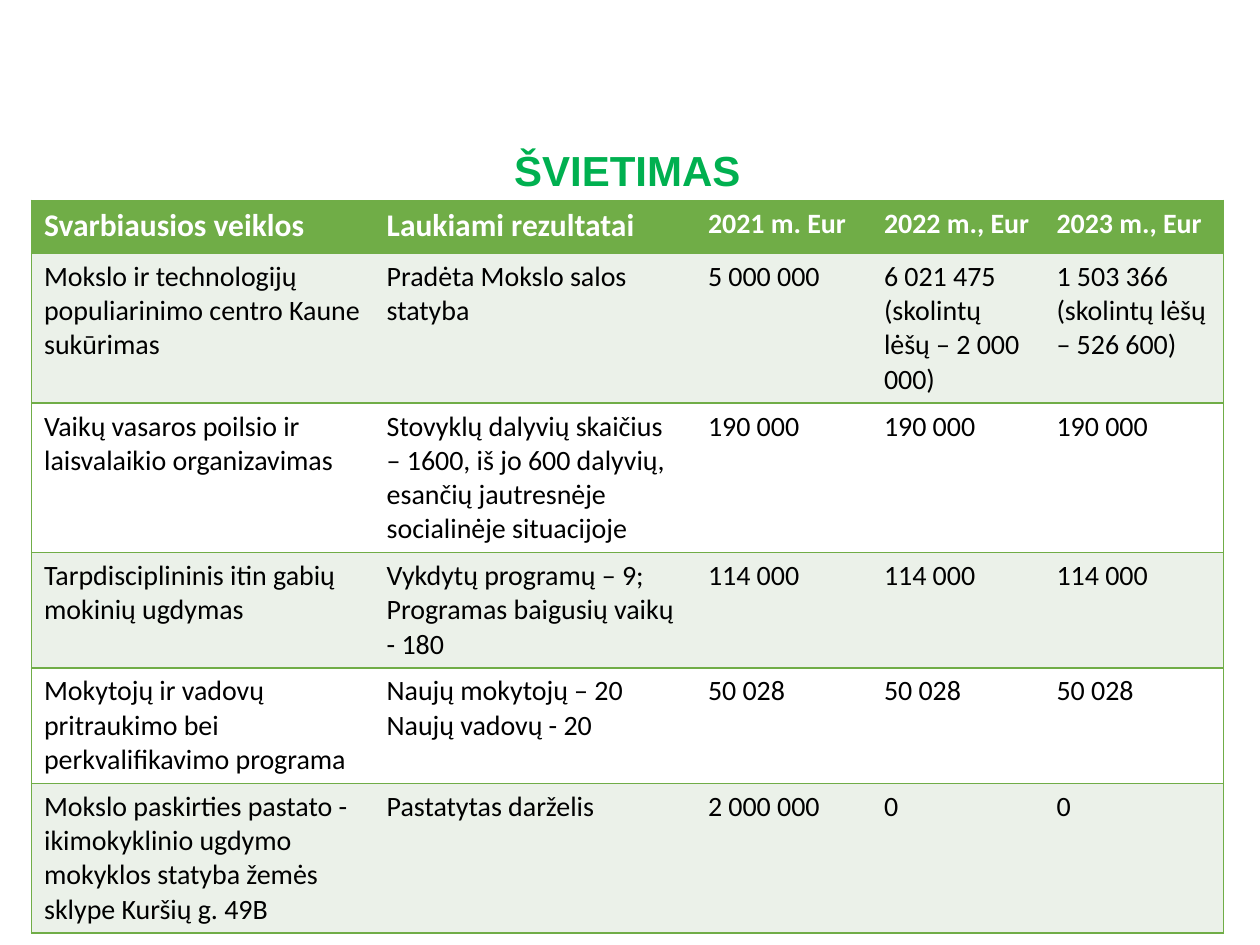
"""Build the education programme slide with its budget table."""
from lxml import etree
from pptx import Presentation
from pptx.dml.color import RGBColor
from pptx.enum.text import MSO_ANCHOR, PP_ALIGN
from pptx.oxml.ns import qn
from pptx.util import Pt

MIDDLE = MSO_ANCHOR.MIDDLE
CENTER = PP_ALIGN.CENTER
GREEN, PALE, WHITE, BLACK, TITLE_GREEN = "70AD47", "EBF1E9", "FFFFFF", "000000", "00B050"
COLUMN_WIDTHS = [195.8, 183.6, 100.6, 98.6, 102.6]
ROW_HEIGHTS = [30.4, 63.4, 82.3, 63.4, 63.4, 82.3]
ROWS = [
    ["Svarbiausios veiklos", "Laukiami rezultatai", "2021 m. Eur", "2022 m., Eur", "2023 m., Eur"],
    ["Mokslo ir technologijų populiarinimo centro Kaune sukūrimas", "Pradėta Mokslo salos statyba",
     "5 000 000", "6 021 475 (skolintų lėšų – 2 000 000)", "1 503 366 (skolintų lėšų – 526 600)"],
    ["Vaikų vasaros poilsio ir laisvalaikio organizavimas",
     "Stovyklų dalyvių skaičius – 1600, iš jo 600 dalyvių, esančių jautresnėje socialinėje situacijoje",
     "190 000", "190 000", "190 000"],
    ["Tarpdisciplininis itin gabių mokinių ugdymas",
     "Vykdytų programų – 9;\nProgramas baigusių vaikų - 180", "114 000", "114 000", "114 000"],
    ["Mokytojų ir vadovų pritraukimo bei perkvalifikavimo programa",
     "Naujų mokytojų – 20\nNaujų vadovų - 20", "50 028", "50 028", "50 028"],
    ["Mokslo paskirties pastato - ikimokyklinio ugdymo mokyklos statyba žemės sklype Kuršių g. 49B",
     "Pastatytas darželis", "2 000 000", "0", "0"],
]


def add_run(paragraph, text, font_name, size, color, bold):
    run = paragraph.add_run()
    run.text = text
    run.font.name = font_name
    run.font.size = Pt(size)
    run.font.bold = bold
    run.font.color.rgb = RGBColor.from_string(color)


def set_borders(cell, visible_sides):
    properties = cell._tc.get_or_add_tcPr()
    for index, side in enumerate("LRTB"):
        line = etree.Element(qn(f"a:ln{side}"), w=str(Pt(1)))
        if side in visible_sides:
            fill = etree.SubElement(line, qn("a:solidFill"))
            etree.SubElement(fill, qn("a:srgbClr"), val=GREEN)
        else:
            etree.SubElement(line, qn("a:noFill"))
        properties.insert(index, line)


presentation = Presentation()
presentation.slide_width, presentation.slide_height = Pt(720), Pt(540)
slide = presentation.slides.add_slide(presentation.slide_layouts[5])

title = slide.shapes.title
title.left, title.top, title.width, title.height = Pt(48.2), Pt(67.7), Pt(620.6), Pt(61.9)
title.text_frame.vertical_anchor = MIDDLE
title_paragraph = title.text_frame.paragraphs[0]
title_paragraph.alignment = CENTER
title_paragraph.line_spacing = 0.9
add_run(title_paragraph, "ŠVIETIMAS", "Arial", 24, TITLE_GREEN, True)

table = slide.shapes.add_table(
    len(ROWS), len(COLUMN_WIDTHS), Pt(18), Pt(114.5), Pt(sum(COLUMN_WIDTHS)), Pt(sum(ROW_HEIGHTS))
).table
table.horz_banding = False
for column, width in zip(table.columns, COLUMN_WIDTHS):
    column.width = Pt(width)

for row_index, texts in enumerate(ROWS):
    table.rows[row_index].height = Pt(ROW_HEIGHTS[row_index])
    is_header = row_index == 0
    row_fill = GREEN if is_header else (PALE if row_index % 2 else WHITE)
    for column_index, text in enumerate(texts):
        cell = table.cell(row_index, column_index)
        cell.fill.solid()
        cell.fill.fore_color.rgb = RGBColor.from_string(row_fill)
        outer_side = {0: "L", len(texts) - 1: "R"}.get(column_index, "")
        set_borders(cell, "TB" + outer_side)
        size = 18 if is_header and column_index < 2 else 16
        for line_index, line_text in enumerate(text.split("\n")):
            frame = cell.text_frame
            paragraph = frame.add_paragraph() if line_index else frame.paragraphs[0]
            add_run(paragraph, line_text, "Calibri", size, WHITE if is_header else BLACK, is_header)

presentation.save("out.pptx")
